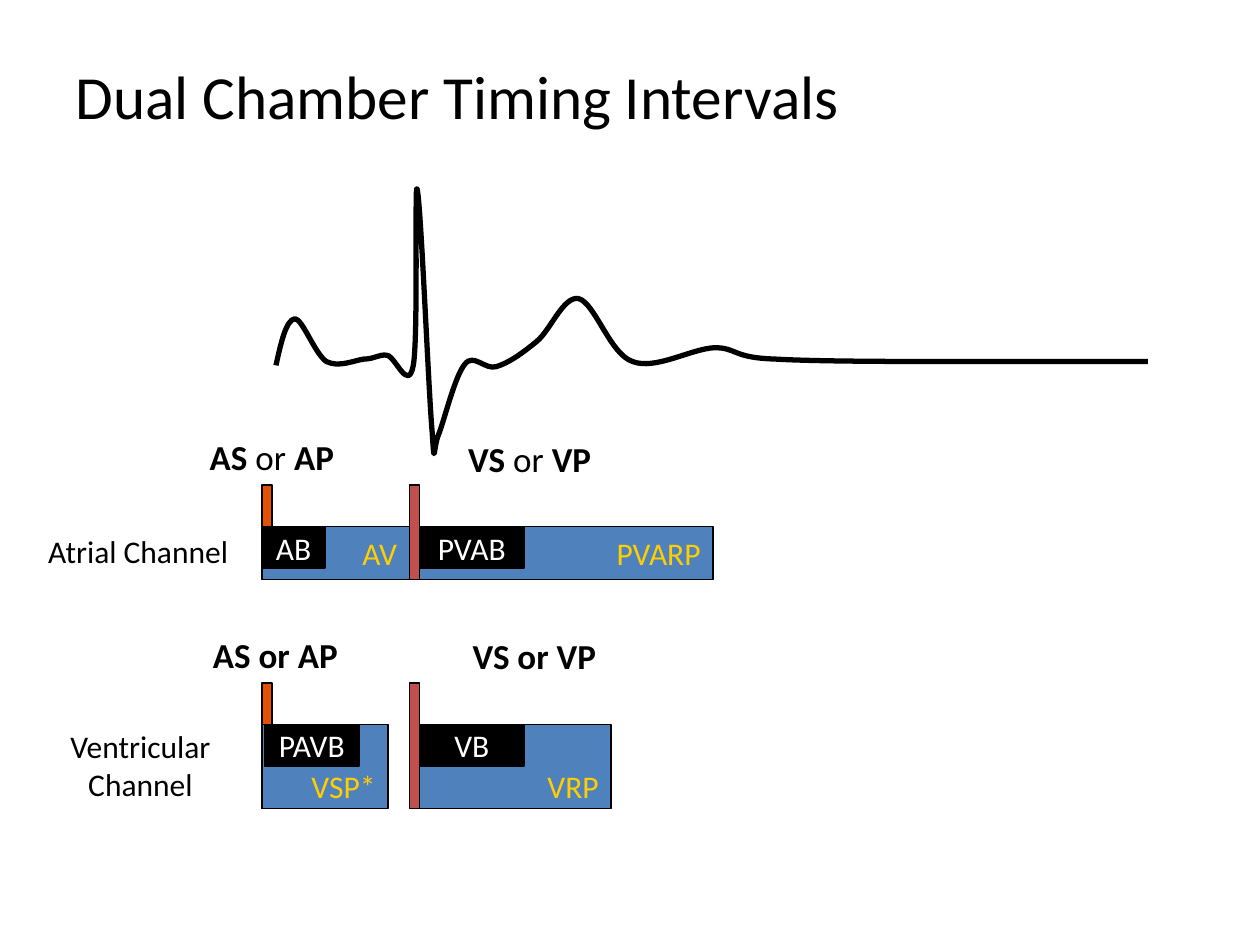
"""Build a slide of dual chamber pacing intervals below an ECG trace."""
import pptx
import pptx.dml.color
import pptx.enum.shapes
import pptx.enum.text
import pptx.oxml
import pptx.oxml.ns
import pptx.util

Inches = pptx.util.Inches
Pt = pptx.util.Pt
RGB = pptx.dml.color.RGBColor
ALIGN = pptx.enum.text.PP_ALIGN
ANCHOR = pptx.enum.text.MSO_ANCHOR
RECT = pptx.enum.shapes.MSO_SHAPE.RECTANGLE
qn = pptx.oxml.ns.qn

BLACK = RGB(0x00, 0x00, 0x00)
WHITE = RGB(0xFF, 0xFF, 0xFF)
BLUE = RGB(0x4F, 0x81, 0xBD)
ORANGE = RGB(0xE3, 0x52, 0x00)
RED = RGB(0xC0, 0x50, 0x4D)
GOLD = RGB(0xFF, 0xCE, 0x00)

ATRIUM, VENT = 4.18, 5.75
SENSE, PACE, THICK = 2.08, 3.25, 0.08
AFTER = PACE + THICK

deck = pptx.Presentation()
deck.slide_width, deck.slide_height = Inches(10), Inches(7.5)
slide = deck.slides.add_slide(deck.slide_layouts[6])
shapes = slide.shapes


def write(shape, lines, size, color, align, **frame):
    """Fill a shape with lines, each a list of (text, bold) runs."""
    body = shape.text_frame
    for key, value in frame.items():
        setattr(body, key, value)
    for row, line in enumerate(lines):
        para = body.add_paragraph() if row else body.paragraphs[0]
        para.alignment = align
        for text, bold in line:
            run = para.add_run()
            run.text = text
            look = {"name": "Calibri", "size": Pt(size), "bold": bold}
            for key, value in look.items():
                setattr(run.font, key, value)
            run.font.color.rgb = color


def block(left, top, width, height, fill):
    """Add an outlined rectangle."""
    shape = shapes.add_shape(RECT, *map(Inches, (left, top, width, height)))
    shape.shadow.inherit = False
    shape.fill.solid()
    shape.fill.fore_color.rgb = fill
    shape.line.color.rgb = BLACK
    shape.line.width = Pt(0.75)
    return shape


start = (2.19, 2.9)
curves = [
    [(2.23, 2.72), (2.27, 2.54), (2.34, 2.53)],
    [(2.4, 2.53), (2.5, 2.81), (2.59, 2.87)],
    [(2.69, 2.92), (2.81, 2.86), (2.89, 2.85)],
    [(2.97, 2.85), (3.01, 2.81), (3.07, 2.82)],
    [(3.14, 2.83), (3.24, 3.12), (3.28, 2.9)],
    [(3.32, 2.69), (3.29, 1.42), (3.31, 1.5)],
    [(3.34, 1.59), (3.4, 3.1), (3.43, 3.43)],
    [(3.45, 3.75), (3.44, 3.54), (3.48, 3.45)],
    [(3.52, 3.36), (3.61, 2.98), (3.69, 2.89)],
    [(3.76, 2.8), (3.85, 2.94), (3.94, 2.91)],
    [(4.04, 2.88), (4.15, 2.8), (4.26, 2.71)],
    [(4.37, 2.62), (4.47, 2.35), (4.59, 2.37)],
    [(4.72, 2.4), (4.84, 2.81), (5.02, 2.87)],
    [(5.2, 2.94), (5.48, 2.77), (5.67, 2.76)],
    [(5.85, 2.76), (5.81, 2.84), (6.15, 2.85)],
    [(6.48, 2.87), (7.17, 2.87), (7.67, 2.87)],
    [(8.16, 2.87), (8.88, 2.87), (9.11, 2.87)],
]
pen = shapes.build_freeform(*map(Inches, start))
pen.add_line_segments(
    [(Inches(x), Inches(y)) for curve in curves for x, y in curve], close=False)
trace = pen.convert_to_shape()
trace.shadow.inherit = False
trace.fill.background()
trace.line.color.rgb = BLACK
trace.line.width = Pt(3)
steps = list(trace.element.iter(qn("a:lnTo")))
for at in range(0, len(steps), 3):
    bend = pptx.oxml.parse_xml(
        f'<a:cubicBezTo {pptx.oxml.ns.nsdecls("a")}/>')
    steps[at].addprevious(bend)
    for step in steps[at:at + 3]:
        bend.append(step[0])
        step.getparent().remove(step)

for top, height in ((ATRIUM, 0.42), (VENT, 0.67)):
    block(SENSE, top - 0.33, THICK, height + 0.33, ORANGE)

bars = [
    (SENSE, ATRIUM, 1.17, 0.42, "AV", ANCHOR.MIDDLE),
    (AFTER, ATRIUM, 2.33, 0.42, "PVARP", ANCHOR.MIDDLE),
    (SENSE, VENT, 1, 0.67, "VSP*", ANCHOR.BOTTOM),
    (AFTER, VENT, 1.52, 0.67, "VRP", ANCHOR.BOTTOM),
]
for left, top, width, height, text, anchor in bars:
    write(block(left, top, width, height, BLUE), [[(text, False)]], 18, GOLD,
          ALIGN.RIGHT, word_wrap=False, vertical_anchor=anchor,
          margin_bottom=Inches(0.05 if anchor == ANCHOR.MIDDLE else 0.03))

blanks = [
    (SENSE, ATRIUM, 0.5, "AB"),
    (AFTER, ATRIUM, 0.83, "PVAB"),
    (2.1, VENT, 0.75, "PAVB"),
    (AFTER, VENT, 0.83, "VB"),
]
for left, top, width, text in blanks:
    write(block(left, top, width, 0.33, BLACK), [[(text, False)]], 18, WHITE,
          ALIGN.CENTER, word_wrap=False, vertical_anchor=ANCHOR.MIDDLE)

for top, height in ((ATRIUM, 0.42), (VENT, 0.67)):
    block(PACE, top - 0.33, THICK, height + 0.33, RED)

labels = [
    (0.5, 0.42, 9, 0.67, [[("Dual Chamber Timing Intervals", False)]], 35,
     ALIGN.LEFT, ANCHOR.MIDDLE),
    (0.08, 4.17, 1.83, 0.44, [[("Atrial Channel", False)]], 18,
     ALIGN.RIGHT, ANCHOR.TOP),
    (0.41, 5.72, 1.41, 0.71,
     [[("Ventricular", False)], [("Channel", False)]], 18,
     ALIGN.CENTER, ANCHOR.TOP),
]
events = [
    (1.38, 3.41, "AS", "AP", False),
    (3.42, 3.42, "VS", "VP", False),
    (1.41, 4.98, "AS", "AP", True),
    (3.46, 4.99, "VS", "VP", True),
]
for left, top, sense, pace, bold in events:
    runs = [(sense, True), (" or ", bold), (pace, True)]
    labels.append((left, top, 1.37, 0.44, [runs], 20, ALIGN.RIGHT, ANCHOR.TOP))
for left, top, width, height, lines, size, align, anchor in labels:
    box = shapes.add_textbox(*map(Inches, (left, top, width, height)))
    write(box, lines, size, BLACK, align, word_wrap=True,
          vertical_anchor=anchor)

deck.save("out.pptx")
